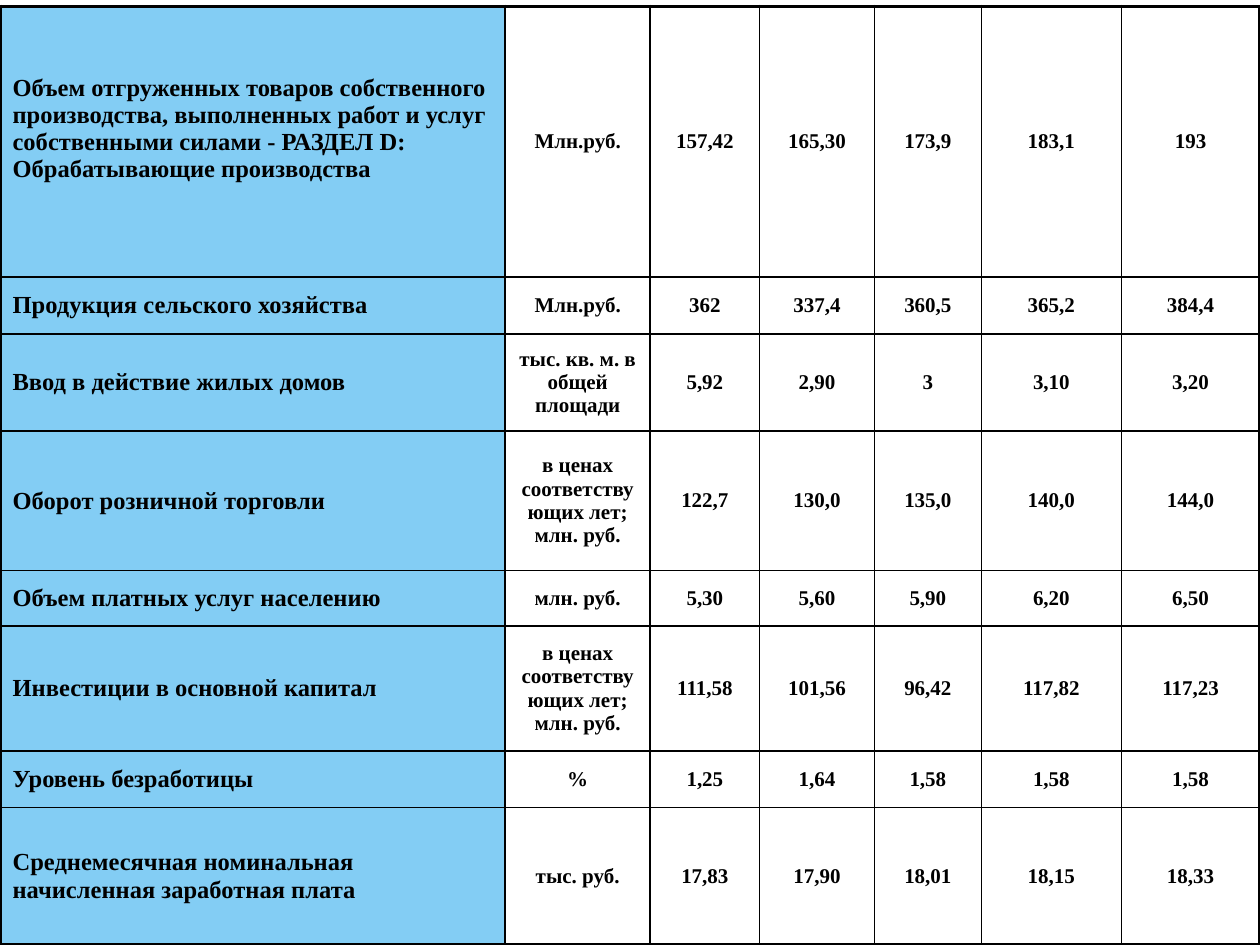
from lxml import etree
from pptx import Presentation
from pptx import util as u
from pptx.dml.color import RGBColor
from pptx.enum import text
from pptx.oxml.ns import qn

BLACK = RGBColor(0x00, 0x00, 0x00)
SKY = RGBColor(0x83, 0xCD, 0xF4)

COL_WIDTHS = [4.01, 1.15, 0.87, 0.91, 0.85, 1.11, 1.1]
ROW_HEIGHTS = [2.15, 0.45, 0.77, 1.11, 0.44, 0.99, 0.45, 1.09]
CURRENT_PRICES = "в ценах соответствующих лет; млн. руб."
INDICATORS = [
    ["Объем отгруженных товаров собственного производства, выполненных работ "
     "и услуг собственными силами - РАЗДЕЛ D: Обрабатывающие производства",
     "Млн.руб.", "157,42", "165,30", "173,9", "183,1", "193"],
    ["Продукция сельского хозяйства",
     "Млн.руб.", "362", "337,4", "360,5", "365,2", "384,4"],
    ["Ввод в действие жилых домов",
     "тыс. кв. м. в общей площади", "5,92", "2,90", "3", "3,10", "3,20"],
    ["Оборот розничной торговли",
     CURRENT_PRICES, "122,7", "130,0", "135,0", "140,0", "144,0"],
    ["Объем платных услуг населению",
     "млн. руб.", "5,30", "5,60", "5,90", "6,20", "6,50"],
    ["Инвестиции в основной капитал",
     CURRENT_PRICES, "111,58", "101,56", "96,42", "117,82", "117,23"],
    ["Уровень безработицы", "%", "1,25", "1,64", "1,58", "1,58", "1,58"],
    ["Среднемесячная номинальная начисленная заработная плата",
     "тыс. руб.", "17,83", "17,90", "18,01", "18,15", "18,33"],
]


class SlideBuilder:
    font = "Times New Roman"
    label_size, value_size = 14, 12
    outer_line, inner_line = 2.25, 1

    def __init__(self, slide):
        self.s = slide

    def table(self, left, top, widths, heights, rows):
        frame = self.s.shapes.add_table(
            len(rows), len(widths), u.Inches(left), u.Inches(top),
            u.Inches(sum(widths)), u.Inches(sum(heights)))
        tbl = frame.table
        tbl.first_row = tbl.horz_banding = False
        for col, width in zip(tbl.columns, widths):
            col.width = u.Inches(width)
        for row, height in zip(tbl.rows, heights):
            row.height = u.Inches(height)
        for i, row in enumerate(rows):
            for j, value in enumerate(row):
                cell = tbl.cell(i, j)
                outer = {"L": j == 0, "R": j == len(widths) - 1,
                         "T": i == 0, "B": i == len(rows) - 1}
                self.borders(cell, outer)
                self.cell(cell, value, is_label=j == 0)
        return tbl

    def borders(self, cell, outer):
        """Draw all four sides, heavier where the side is on the table's edge."""
        tc_pr = cell._tc.get_or_add_tcPr()
        for side, is_outer in outer.items():
            width = u.Pt(self.outer_line if is_outer else self.inner_line)
            ln = etree.SubElement(tc_pr, qn(f"a:ln{side}"), w=str(int(width)))
            fill = etree.SubElement(ln, qn("a:solidFill"))
            etree.SubElement(fill, qn("a:srgbClr"), val=str(BLACK))

    def cell(self, cell, value, is_label):
        if is_label:
            cell.fill.solid()
            cell.fill.fore_color.rgb = SKY
        else:
            cell.fill.background()
        cell.vertical_anchor = text.MSO_ANCHOR.MIDDLE
        p = cell.text_frame.paragraphs[0]
        p.text = value
        p.alignment = text.PP_ALIGN.LEFT if is_label else text.PP_ALIGN.CENTER
        p.font.name = self.font
        p.font.size = u.Pt(self.label_size if is_label else self.value_size)
        p.font.bold = True
        p.font.color.rgb = BLACK


def main():
    prs = Presentation()
    prs.slide_width, prs.slide_height = u.Inches(10), u.Inches(7.5)
    s = prs.slides.add_slide(prs.slide_layouts[6])
    tbl = SlideBuilder(s).table(0, 0.05, COL_WIDTHS, ROW_HEIGHTS, INDICATORS)
    # The first label sits slightly above the middle of its tall row.
    tbl.cell(0, 0).margin_bottom = u.Inches(0.26)
    prs.save("out.pptx")


if __name__ == "__main__":
    main()
